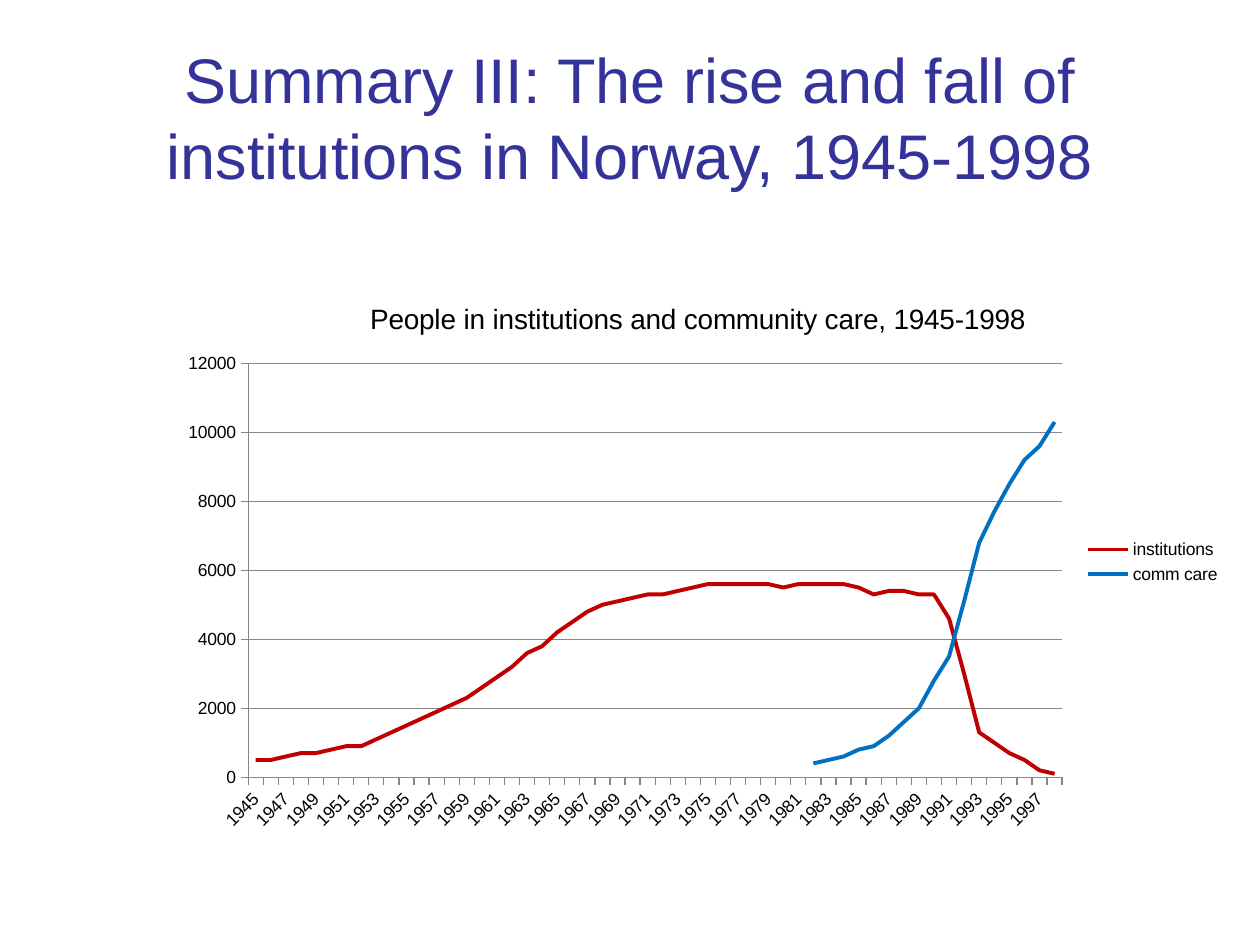
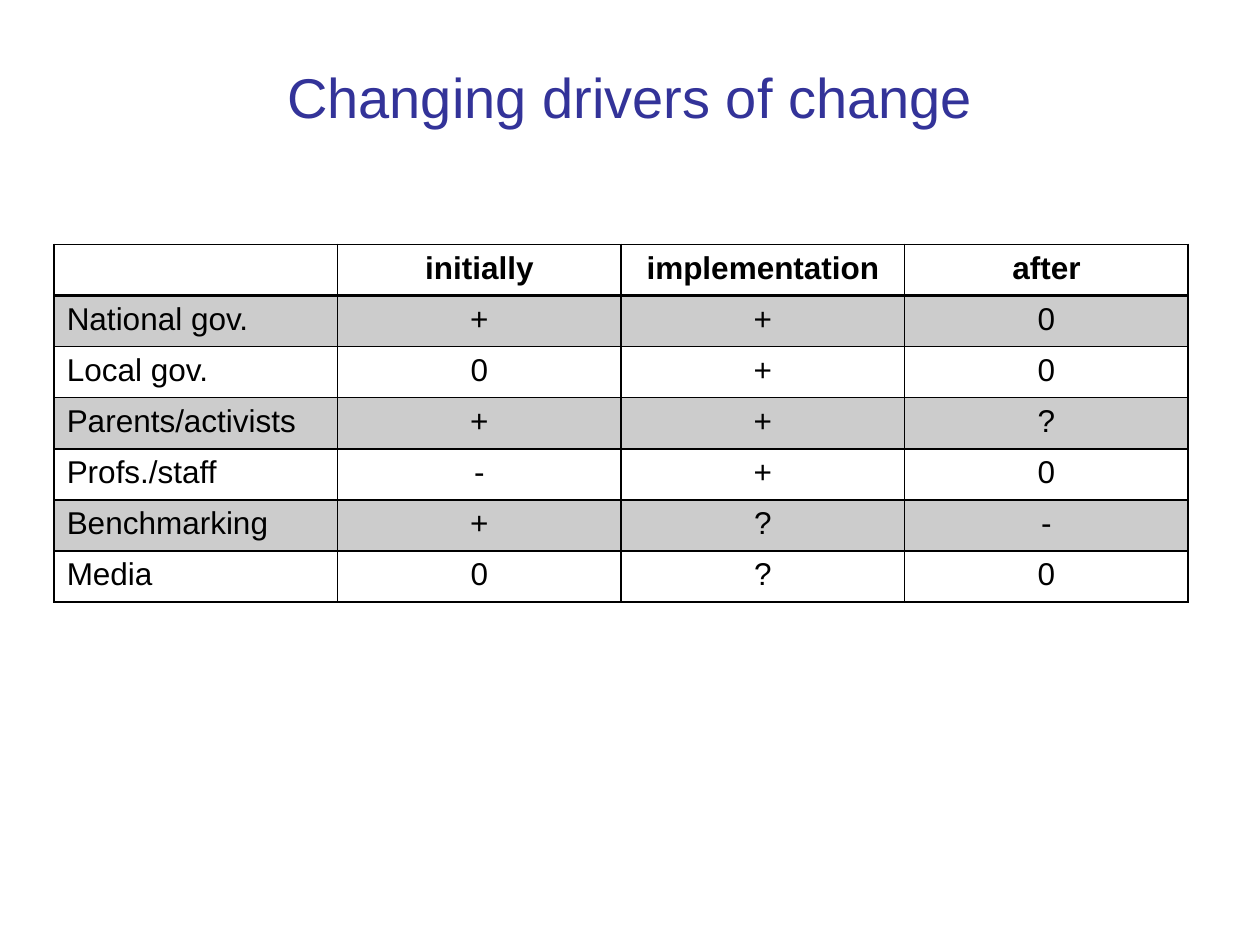
"""Build two slides on care in Norway: a line chart and a table of drivers."""

from dataclasses import dataclass

from lxml import etree
from pptx import Presentation
from pptx.chart.data import CategoryChartData
from pptx.dml.color import RGBColor
from pptx.enum.chart import XL_CHART_TYPE, XL_LEGEND_POSITION, XL_MARKER_STYLE, XL_TICK_MARK
from pptx.enum.text import MSO_ANCHOR, MSO_AUTO_SIZE, PP_ALIGN
from pptx.oxml import parse_xml
from pptx.oxml.ns import nsdecls, qn
from pptx.util import Inches, Pt

LINE = XL_CHART_TYPE.LINE
RIGHT = XL_LEGEND_POSITION.RIGHT
PLAIN = XL_MARKER_STYLE.NONE
OUTSIDE = XL_TICK_MARK.OUTSIDE
MIDDLE = MSO_ANCHOR.MIDDLE
FIXED = MSO_AUTO_SIZE.NONE
CENTER = PP_ALIGN.CENTER
LEFT = PP_ALIGN.LEFT


@dataclass(frozen=True)
class Theme:
    """Colours, font and type sizes of the deck."""

    font: str = "Arial"
    title: str = "333399"
    ink: str = "000000"
    grid: str = "868686"
    red: str = "C00000"
    blue: str = "0070C0"
    long_title: int = 36
    short_title: int = 32
    chart_title: int = 16
    chart_text: int = 10
    cell_text: int = 18
    shade: int = 20


@dataclass(frozen=True)
class Series:
    """One line of the chart, starting in a given year."""

    name: str
    color: str
    start: int
    values: tuple[int, ...]


@dataclass(frozen=True)
class Box:
    """A place on the slide, in inches."""

    left: float
    top: float
    width: float
    height: float

    def place(self) -> tuple:
        """Return the four lengths."""
        return tuple(Inches(n) for n in (self.left, self.top, self.width, self.height))


THEME = Theme()
FIRST, LAST = 1945, 1998
YEARS = [str(year) for year in range(FIRST, LAST + 1)]

SERIES = (
    Series("institutions", THEME.red, 1945, (
        500, 500, 600, 700, 700, 800, 900, 900, 1100, 1300, 1500, 1700, 1900, 2100,
        2300, 2600, 2900, 3200, 3600, 3800, 4200, 4500, 4800, 5000, 5100, 5200, 5300,
        5300, 5400, 5500, 5600, 5600, 5600, 5600, 5600, 5500, 5600, 5600, 5600, 5600,
        5500, 5300, 5400, 5400, 5300, 5300, 4600, 3000, 1300, 1000, 700, 500, 200, 100)),
    Series("comm care", THEME.blue, 1982, (
        400, 500, 600, 800, 900, 1200, 1600, 2000, 2800, 3500, 5100, 6800, 7700, 8500,
        9200, 9600, 10300)),
)

DRIVERS = (
    ("", "initially", "implementation", "after"),
    ("National gov.", "+", "+", "0"),
    ("Local gov.", "0", "+", "0"),
    ("Parents/activists", "+", "+", "?"),
    ("Profs./staff", "-", "+", "0"),
    ("Benchmarking", "+", "?", "-"),
    ("Media", "0", "?", "0"),
)


def style(font, size: int, color: str = THEME.ink, bold: bool = False) -> None:
    """Set face, size, colour and weight of a font."""
    font.name, font.size, font.bold = THEME.font, Pt(size), bold
    font.color.rgb = RGBColor.from_string(color)


def add_slide(deck, text: str, size: int, height: float):
    """Add a slide with its title."""
    slide = deck.slides.add_slide(deck.slide_layouts[5])
    title = slide.shapes.title
    title.left, title.top, title.width, title.height = Box(0.5, 0.3, 9, height).place()
    frame = title.text_frame
    frame.text = text
    frame.word_wrap, frame.auto_size, frame.vertical_anchor = True, FIXED, MIDDLE
    line = frame.paragraphs[0]
    line.alignment = CENTER
    style(line.runs[0].font, size, THEME.title)
    return slide


def draw_line(line, color: str, width: float) -> None:
    """Set colour and width of a line."""
    line.color.rgb = RGBColor.from_string(color)
    line.width = Pt(width)


def set_plot(chart, plot: Box) -> None:
    """Fix the inner plot area as shares of the chart."""
    marks = "".join(f'<c:{key}Mode val="edge"/>' for key in "xy")
    pairs = zip("xywh", (plot.left, plot.top, plot.width, plot.height))
    sizes = "".join(f'<c:{key} val="{share}"/>' for key, share in pairs)
    area = chart.plots[0]._element.getparent()
    for old in area.findall(qn("c:layout")):
        area.remove(old)
    area.insert(0, parse_xml(
        f'<c:layout {nsdecls("c")}><c:manualLayout><c:layoutTarget val="inner"/>'
        f"{marks}{sizes}</c:manualLayout></c:layout>"))


def add_chart(slide, box: Box, title: str) -> None:
    """Draw the line chart of people in care."""
    data = CategoryChartData()
    data.categories = YEARS
    for item in SERIES:
        data.add_series(item.name, [None] * (item.start - FIRST) + list(item.values))
    chart = slide.shapes.add_chart(LINE, *box.place(), data).chart
    style(chart.font, THEME.chart_text)
    chart.has_title = True
    chart.chart_title.include_in_layout = False
    head = chart.chart_title.text_frame
    head.text = title
    style(head.paragraphs[0].runs[0].font, THEME.chart_title)
    chart.has_legend = True
    chart.legend.position = RIGHT
    chart.legend.include_in_layout = False
    style(chart.legend.font, THEME.chart_text)
    chart.plots[0].vary_by_categories = False
    for line, item in zip(chart.plots[0].series, SERIES):
        line.smooth = False
        line.marker.style = PLAIN
        draw_line(line.format.line, item.color, 2.25)

    years, people = chart.category_axis, chart.value_axis
    for axis in (years, people):
        axis.major_tick_mark = OUTSIDE
        style(axis.tick_labels.font, THEME.chart_text)
        draw_line(axis.format.line, THEME.grid, 0.75)
    people.minimum_scale, people.maximum_scale, people.major_unit = 0, 12000, 2000
    people.has_major_gridlines = True
    draw_line(people.major_gridlines.format.line, THEME.grid, 0.75)
    years._element.find(qn("c:txPr")).find(qn("a:bodyPr")).set("rot", "-2700000")
    skip = parse_xml(f'<c:tickLblSkip {nsdecls("c")} val="2"/>')
    years._element.find(qn("c:noMultiLvlLbl")).addprevious(skip)
    set_plot(chart, Box(0.08, 0.15, 0.76, 0.73))


def set_edges(cell, top: int, base: int) -> None:
    """Draw the four borders of a cell."""
    props = cell._tc.get_or_add_tcPr()
    for spot, (side, width) in enumerate(zip("LRTB", (1, 1, top, base))):
        props.insert(spot, parse_xml(
            f'<a:ln{side} {nsdecls("a")} w="{Pt(width)}"><a:solidFill>'
            f'<a:srgbClr val="{THEME.ink}"/></a:solidFill></a:ln{side}>'))


def fill_cell(cell, shaded: bool) -> None:
    """Give a cell a faint fill or none."""
    if not shaded:
        cell.fill.background()
        return
    cell.fill.solid()
    cell.fill.fore_color.rgb = RGBColor.from_string(THEME.ink)
    color = cell._tc.tcPr.find(".//" + qn("a:srgbClr"))
    etree.SubElement(color, qn("a:alpha"), val=str(THEME.shade * 1000))


def add_table(slide, box: Box) -> None:
    """Draw the table of drivers."""
    size = len(DRIVERS), len(DRIVERS[0])
    table = slide.shapes.add_table(*size, *box.place()).table
    table.horz_banding = False
    for row, words in enumerate(DRIVERS):
        for col, word in enumerate(words):
            cell = table.cell(row, col)
            cell.text_frame.text = word
            line = cell.text_frame.paragraphs[0]
            line.alignment = CENTER if col else LEFT
            style(line.font, THEME.cell_text)
            for run in line.runs:
                style(run.font, THEME.cell_text, bold=row == 0)
            fill_cell(cell, row % 2 == 1)
            set_edges(cell, 2 if row == 1 else 1, 2 if row == 0 else 1)


def main() -> None:
    """Build and save the deck."""
    deck = Presentation()
    deck.slide_width, deck.slide_height = Inches(10), Inches(7.5)
    slide = add_slide(
        deck, "Summary III: The rise and fall of institutions in Norway, 1945-1998",
        THEME.long_title, 1.25)
    add_chart(slide, Box(1.29, 2.21, 8.5, 4.5),
              "People in institutions and community care, 1945-1998")
    slide = add_slide(deck, "Changing drivers of change", THEME.short_title, 0.93)
    add_table(slide, Box(0.43, 1.94, 9, 2.84))
    deck.save("out.pptx")


if __name__ == "__main__":
    main()
